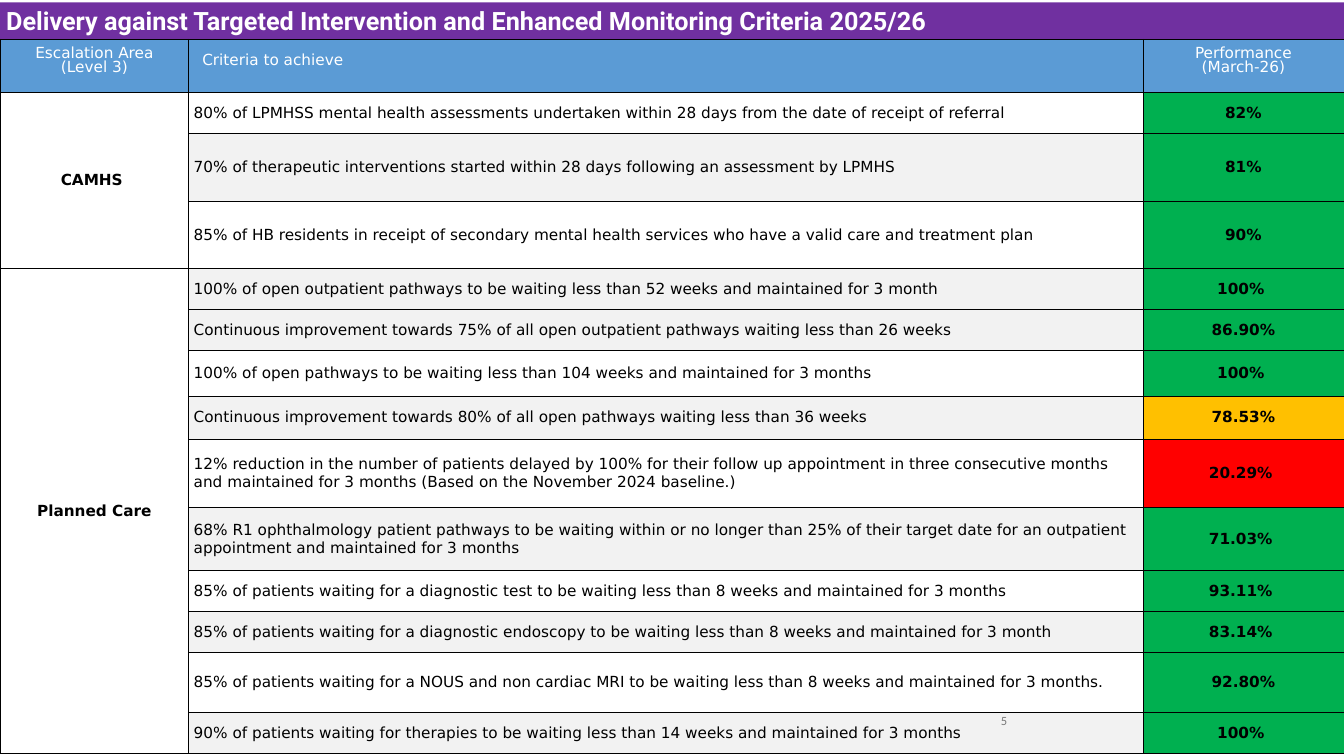
import lxml.etree
import pptx
import pptx.dml.color
import pptx.enum.text
import pptx.oxml.ns
import pptx.util

Inches = pptx.util.Inches
Pt = pptx.util.Pt
Align = pptx.enum.text.PP_ALIGN
Anchor = pptx.enum.text.MSO_ANCHOR

COLOURS = {
    "purple": "7030A0", "blue": "5B9BD5", "white": "FFFFFF", "black": "000000",
    "grey": "F2F2F2", "green": "00B050", "amber": "FFC000", "red": "FF0000",
    "number": "797979",
}
COLUMN_WIDTHS = [3.09, 15.61, 3.29]
HEADER_HEIGHT = 0.87
HEADERS = [
    (["Escalation Area", "(Level 3)"], Align.CENTER),
    (["Criteria to achieve"], Align.LEFT),
    (["Performance", "(March-26)"], Align.CENTER),
]
AREAS = {
    "CAMHS ": [
        (0.67, "white", "80% of LPMHSS mental health assessments undertaken within 28 days from the date of receipt of referral", "82%", "green"),
        (1.11, "grey", "70% of therapeutic interventions started within 28 days following an assessment by LPMHS", "81%", "green"),
        (1.11, "white", "85% of HB residents in receipt of secondary mental health services who have a valid care and treatment plan", "90%", "green"),
    ],
    "Planned Care": [
        (0.67, "grey", "100% of open outpatient pathways to be waiting less than 52 weeks and maintained for 3 month", "100% ", "green"),
        (0.67, "grey", "Continuous improvement towards 75% of all open outpatient pathways waiting less than 26 weeks", "86.90%", "green"),
        (0.74, "white", "100% of open pathways to be waiting less than 104 weeks and maintained for 3 months", "100% ", "green"),
        (0.71, "grey", "Continuous improvement towards 80% of all open pathways waiting less than 36 weeks", "78.53%", "amber"),
        (1.11, "white", "12% reduction in the number of patients delayed by 100% for their follow up appointment in three consecutive months and maintained for 3 months (Based on the November 2024 baseline.)", "20.29% ", "red"),
        (1.04, "grey", "68% R1 ophthalmology patient pathways to be waiting within or no longer than 25% of their target date for an outpatient appointment and maintained for 3 months", "71.03% ", "green"),
        (0.67, "white", "85% of patients waiting for a diagnostic test to be waiting less than 8 weeks and maintained for 3 months", "93.11% ", "green"),
        (0.67, "grey", "85% of patients waiting for a diagnostic endoscopy to be waiting less than 8 weeks and maintained for 3 month", "83.14% ", "green"),
        (0.98, "white", "85% of patients waiting for a NOUS and non cardiac MRI to be waiting less than 8 weeks and maintained for 3 months.", "92.80%", "green"),
        (0.67, "grey", "90% of patients waiting for therapies to be waiting less than 14 weeks and maintained for 3 months", "100% ", "green"),
    ],
}


def rgb(name):
    """Return the named colour."""
    return pptx.dml.color.RGBColor.from_string(COLOURS[name])


def fill_solid(item, colour):
    """Fill a shape or cell with a named colour."""
    item.fill.solid()
    item.fill.fore_color.rgb = rgb(colour)


def set_font(paragraph, name, size, colour, bold=False):
    """Format all the text of a paragraph."""
    font = paragraph.font
    font.name, font.size, font.bold = name, Pt(size), bold
    font.color.rgb = rgb(colour)


def set_margins(item, horizontal, vertical):
    """Set the inner margins of a cell or text frame."""
    item.margin_left = item.margin_right = Inches(horizontal)
    item.margin_top = item.margin_bottom = Inches(vertical)


def add_borders(cell):
    """Draw a one-point black line on each side of a cell."""
    properties = cell._tc.get_or_add_tcPr()
    for index, side in enumerate(["lnL", "lnR", "lnT", "lnB"]):
        line = lxml.etree.Element(pptx.oxml.ns.qn(f"a:{side}"), w=str(Pt(1)))
        solid = lxml.etree.SubElement(line, pptx.oxml.ns.qn("a:solidFill"))
        lxml.etree.SubElement(solid, pptx.oxml.ns.qn("a:srgbClr"), val=COLOURS["black"])
        properties.insert(index, line)


def write_header(cell, lines, alignment):
    """Write a column heading with tight lines."""
    set_margins(cell, 0.22, 0.11)
    fill_solid(cell, "blue")
    cell.text = "\n".join(lines)
    for index, paragraph in enumerate(cell.text_frame.paragraphs):
        paragraph.alignment = alignment
        paragraph.line_spacing = Pt(8)
        if index:
            paragraph.space_before = Pt(8)
        set_font(paragraph, "DejaVu Sans", 18, "white")


def write_cell(cell, text, colour, alignment=Align.CENTER, bold=True):
    """Write a body cell."""
    set_margins(cell, 0.08, 0.08)
    fill_solid(cell, colour)
    cell.text = text
    paragraph = cell.text_frame.paragraphs[0]
    paragraph.alignment = alignment
    set_font(paragraph, "DejaVu Sans", 18, "black", bold)


def add_title(slide):
    """Turn the title placeholder into the purple banner."""
    title = slide.shapes.title
    title.left, title.top = Inches(0), Inches(0.04)
    title.width, title.height = Inches(21.99), Inches(0.6)
    fill_solid(title, "purple")
    frame = title.text_frame
    frame.text = "Delivery against Targeted Intervention and Enhanced Monitoring Criteria 2025/26"
    frame.auto_size = pptx.enum.text.MSO_AUTO_SIZE.NONE
    frame.vertical_anchor = Anchor.TOP
    set_margins(frame, 0.1, 0.05)
    paragraph = frame.paragraphs[0]
    paragraph.alignment = Align.LEFT
    set_font(paragraph, "Roboto", 29.7, "white", True)


def add_criteria_table(slide):
    """Add the table of criteria, grouped by escalation area."""
    heights = [HEADER_HEIGHT] + [row[0] for rows in AREAS.values() for row in rows]
    table = slide.shapes.add_table(
        len(heights), len(COLUMN_WIDTHS), Inches(0), Inches(0.64),
        Inches(sum(COLUMN_WIDTHS)), Inches(sum(heights)),
    ).table
    for column, width in zip(table.columns, COLUMN_WIDTHS):
        column.width = Inches(width)
    for row, height in zip(table.rows, heights):
        row.height = Inches(height)
    for column, (lines, alignment) in enumerate(HEADERS):
        write_header(table.cell(0, column), lines, alignment)
    first = 1
    for area, rows in AREAS.items():
        for index, (_, shade, criterion, performance, status) in enumerate(rows, first):
            write_cell(table.cell(index, 0), "", "white")
            write_cell(table.cell(index, 1), criterion, shade, Align.LEFT, False)
            write_cell(table.cell(index, 2), performance, status)
        write_cell(table.cell(first, 0), area, "white")
        table.cell(first, 0).merge(table.cell(first + len(rows) - 1, 0))
        first += len(rows)
    for cell in table.iter_cells():
        cell.vertical_anchor = Anchor.MIDDLE
        add_borders(cell)


def add_page_number(slide):
    """Add the page number."""
    frame = slide.shapes.add_textbox(
        Inches(12.62), Inches(11.46), Inches(4.02), Inches(0.66)
    ).text_frame
    frame.word_wrap = True
    frame.vertical_anchor = Anchor.MIDDLE
    set_margins(frame, 0.16, 0.08)
    frame.text = "5"
    paragraph = frame.paragraphs[0]
    paragraph.alignment = Align.RIGHT
    set_font(paragraph, "Calibri", 14.8, "number")


def main():
    """Build the performance slide."""
    presentation = pptx.Presentation()
    presentation.slide_width = Inches(21.99)
    presentation.slide_height = Inches(12.37)
    slide = presentation.slides.add_slide(presentation.slide_layouts[5])
    add_title(slide)
    add_criteria_table(slide)
    add_page_number(slide)
    presentation.save("out.pptx")


if __name__ == "__main__":
    main()
